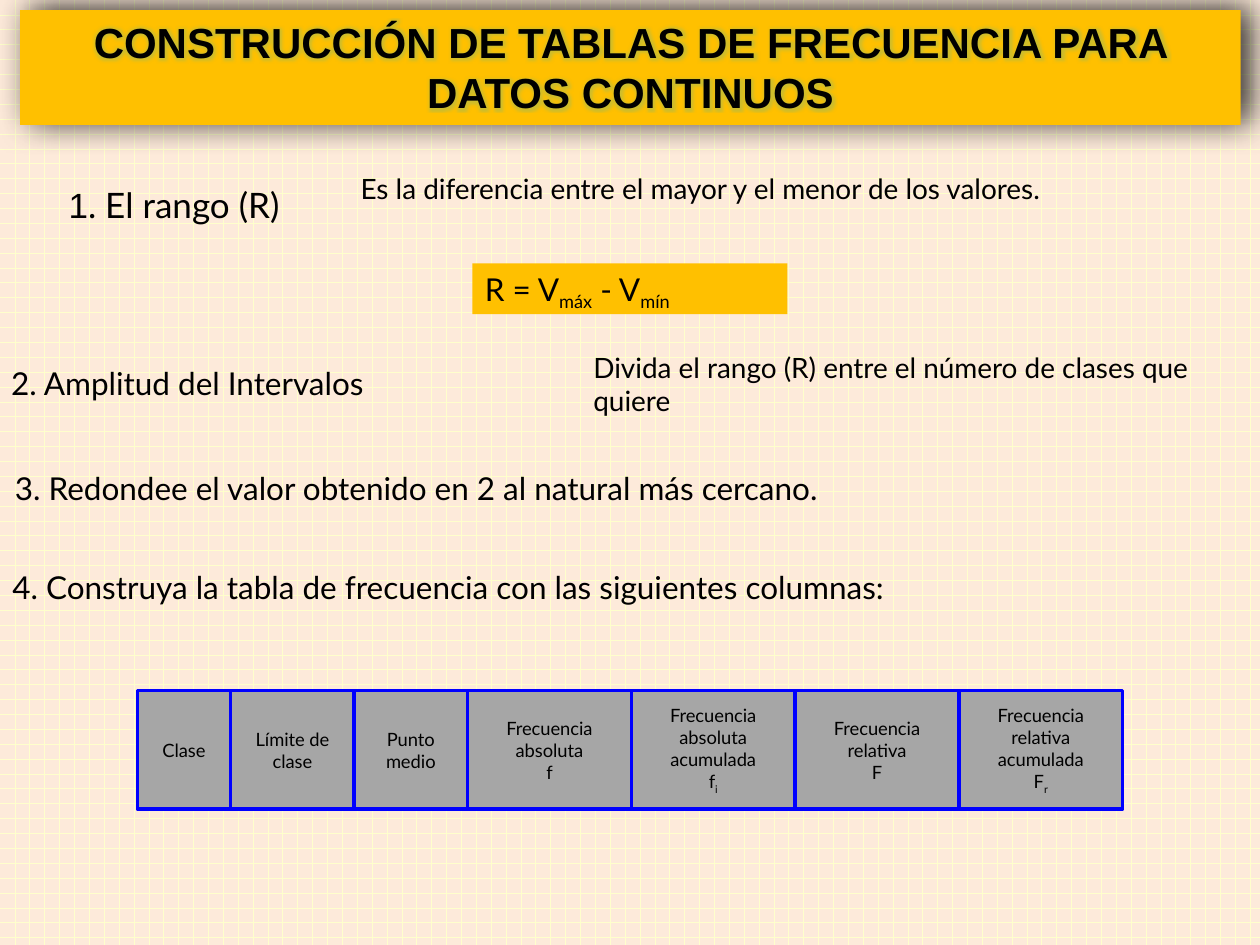
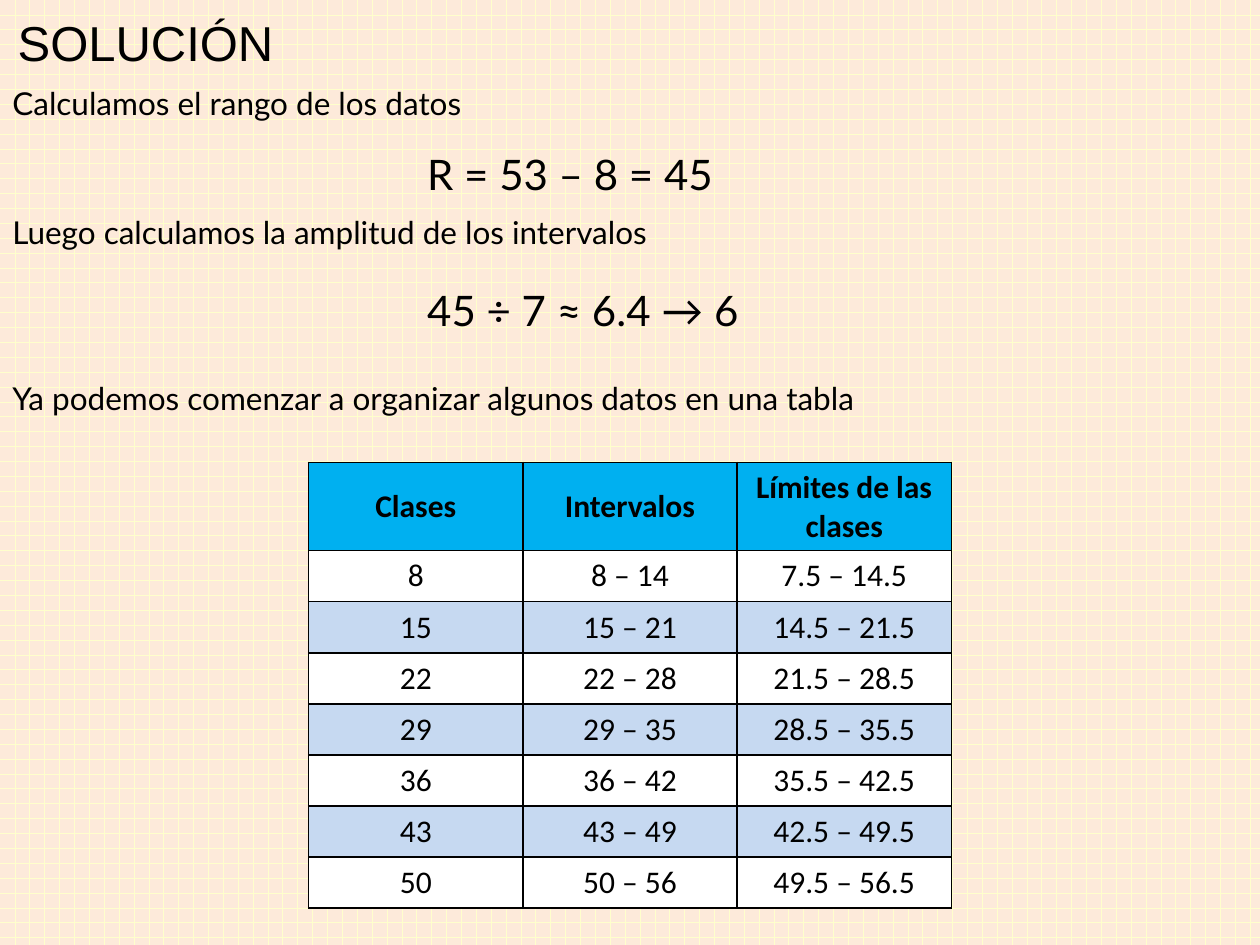
from itertools import accumulate
from lxml import etree
from pptx import Presentation
from pptx.dml.color import RGBColor
from pptx.enum import dml, shapes, text
from pptx.oxml.ns import qn
from pptx.util import Pt


class Theme:
    ink, gold, grey, blue = "000000", "FFC000", "A6A6A6", "0000FF"
    head, white, band = "00B0F0", "FFFFFF", "C6D9F1"
    brick, paper, glow = "FFFFCC", "FDEADA", "9BBB59"
    sans, body, grid = "Arial", "Lato", "Calibri"
    title, big, step, note, small = 28, 24, 18, 16, 10.5


TITLES = [
    ("CONSTRUCCIÓN DE TABLAS DE FRECUENCIA PARA DATOS CONTINUOS",
     (11.5, 5.8, 697.5, 65.5),
     dict(size=Theme.big, bold=True, align="CENTER")),
    ("SOLUCIÓN", (2.9, 3.6, 193, 41), dict(size=Theme.title)),
]
STEPS = [
    ("1. El rango (R)", (0, 101.5, 199, 32),
     dict(size=20, align="CENTER", lead=Theme.sans)),
    ("Es la diferencia entre el mayor y el menor de los valores.",
     (199, 94.3, 476, 46), dict(size=Theme.note)),
    ("R = V_máx_ - V_mín", (270, 150.5, 180, 29), dict(fill=Theme.gold)),
    ("2. Amplitud del Intervalos", (-0.7, 204.5, 332.6, 29), {}),
    ("Divida el rango (R) entre el número de clases que quiere",
     (332, 196.5, 388, 46), dict(size=Theme.note)),
    ("3. Redondee el valor obtenido en 2 al natural más cercano.",
     (1.4, 264.2, 718.6, 29), {}),
    ("4. Construya la tabla de frecuencia con las siguientes columnas:",
     (0, 321, 720, 51), {}),
]
HEADS = [
    ("Clase", 53.3), ("Límite de clase", 70.6), ("Punto medio", 64.8),
    ("Frecuencia absoluta\nf", 93.6),
    ("Frecuencia absoluta acumulada\nf_i", 93.6),
    ("Frecuencia relativa\nF", 93.6),
    ("Frecuencia relativa acumulada\nF_r", 93.6),
]
WORK = [
    ("Calculamos el rango de los datos", (0, 44.6, 405, 29), {}),
    ("R = 53 – 8 = 45", (237, 81.4, 247, 36), dict(size=Theme.big)),
    ("Luego calculamos la amplitud de los intervalos", (0, 118, 581, 29), {}),
    ("45 ÷ 7 ≈ 6.4 → 6", (237, 159, 253, 36), dict(size=Theme.big)),
    ("Ya podemos comenzar a organizar algunos datos en una tabla",
     (0, 213, 720, 51), {}),
]
COLS = ["Clases", "Intervalos", "Límites de las clases"]
ROWS = [(f"{low}", f"{low} – {low + 6}", f"{low - 0.5} – {low + 6.5}")
        for low in range(8, 51, 7)]


def node(parent, tag, **attrs):
    item = etree.SubElement(parent, qn(tag))
    for key, value in attrs.items():
        item.set(key, str(value))
    return item


def tint(parent, color, alpha=100):
    node(node(parent, "a:srgbClr", val=color), "a:alpha", val=alpha * 1000)


def paint(item, color):
    item.fill.solid()
    item.fill.fore_color.rgb = RGBColor.from_string(color)


def write(frame, words, size=Theme.step, font=Theme.body, bold=False,
          align="LEFT", anchor="TOP", lead=None):
    frame.word_wrap = True
    frame.vertical_anchor = getattr(text.MSO_ANCHOR, anchor)
    for num, line in enumerate(words.split("\n")):
        para = frame.add_paragraph() if num else frame.paragraphs[0]
        para.alignment = getattr(text.PP_ALIGN, align)
        parts = [(part, font, idx % 2)
                 for idx, part in enumerate(line.split("_"))]
        if lead:
            parts = [(line[0], lead, 0), (line[1:], font, 0)]
        for part, face, sub in parts:
            run = para.add_run()
            run.text = part
            run.font.name, run.font.size = face, Pt(size)
            run.font.bold = bold
            run.font.color.rgb = RGBColor.from_string(Theme.ink)
            if sub:
                run.font._element.set("baseline", "-25000")


def block(slide, words, place, fill=None, line=None, **form):
    place = [Pt(n) for n in place]
    if fill:
        box = slide.shapes.add_shape(shapes.MSO_SHAPE.RECTANGLE, *place)
        box.shadow.inherit = False
        paint(box, fill)
        if line:
            box.line.color.rgb = RGBColor.from_string(line)
            box.line.width = Pt(2)
        else:
            box.line.fill.background()
    else:
        box = slide.shapes.add_textbox(*place)
    write(box.text_frame, words, **form)


def start(deck, title):
    words, place, form = title
    slide = deck.slides.add_slide(deck.slide_layouts[5])
    fill = slide.background.fill
    fill.patterned()
    fill.pattern = dml.MSO_PATTERN.HORIZONTAL_BRICK
    fill.fore_color.rgb = RGBColor.from_string(Theme.brick)
    fill.back_color.rgb = RGBColor.from_string(Theme.paper)
    head = slide.shapes.title
    head.left, head.top, head.width, head.height = map(Pt, place)
    head.text_frame.auto_size = text.MSO_AUTO_SIZE.NONE
    write(head.text_frame, words, font=Theme.sans, **form)
    return slide


def lift(head):
    paint(head, Theme.gold)
    effects = node(head._element.spPr, "a:effectLst")
    tint(node(effects, "a:outerShdw", blurRad=Pt(19), dist=Pt(5),
              dir=340 * 60000, algn="ctr", rotWithShape=0), Theme.ink, 80)
    props = head.text_frame.paragraphs[0].runs[0].font._element
    effects = etree.Element(qn("a:effectLst"))
    tint(node(effects, "a:glow", rad=Pt(4)), Theme.glow, 50)
    props.find(qn("a:solidFill")).addnext(effects)


def edge(cell):
    props = cell._tc.get_or_add_tcPr()
    for side in "LRTB":
        line = node(props, f"a:ln{side}", w=Pt(1))
        tint(node(line, "a:solidFill"), Theme.ink)


def grid(slide):
    rows = [COLS, *ROWS]
    frame = slide.shapes.add_table(len(rows), len(COLS), Pt(176.4), Pt(264.2),
                                   Pt(367.2), Pt(255))
    table = frame.table
    for col in table.columns:
        col.width = Pt(122.4)
    for num, row in enumerate(rows):
        table.rows[num].height = Pt(29.2 if num else 50.4)
        color = (Theme.white if num % 2 else Theme.band) if num else Theme.head
        for idx, words in enumerate(row):
            cell = table.cell(num, idx)
            edge(cell)
            paint(cell, color)
            write(cell.text_frame, words, font=Theme.grid, bold=not num,
                  align="CENTER")
            cell.vertical_anchor = text.MSO_ANCHOR.MIDDLE


def main():
    deck = Presentation()
    deck.slide_width, deck.slide_height = Pt(720), Pt(540)
    method, answer = [start(deck, title) for title in TITLES]
    lift(method.shapes.title)
    for slide, items in ((method, STEPS), (answer, WORK)):
        for words, place, form in items:
            block(slide, words, place, **form)
    lefts = accumulate([wide for _, wide in HEADS], initial=78.5)
    for (words, wide), left in zip(HEADS, lefts):
        block(method, words, (left, 394.6, wide, 67.7), fill=Theme.grey,
              line=Theme.blue, size=Theme.small, align="CENTER",
              anchor="MIDDLE")
    grid(answer)
    deck.save("out.pptx")


if __name__ == "__main__":
    main()
